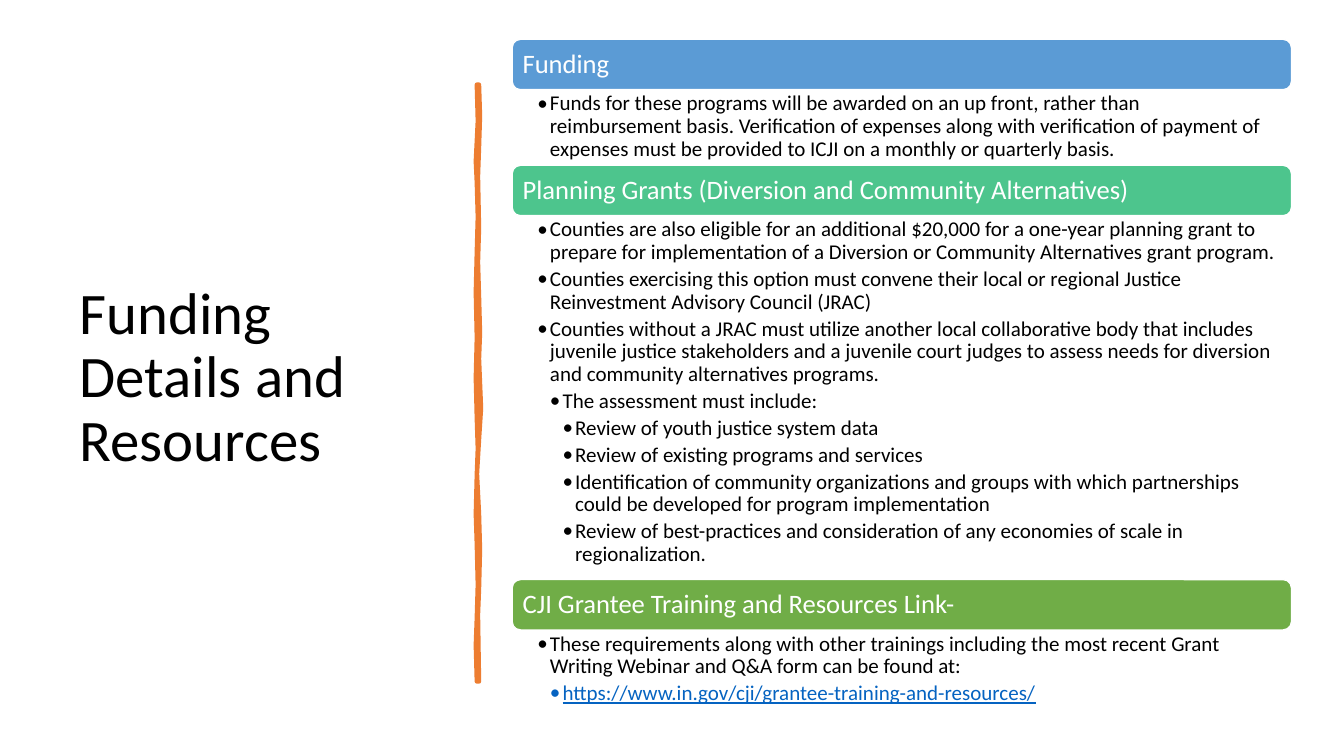
from lxml import etree
from pptx import Presentation
from pptx.dml.color import RGBColor
from pptx.enum import shapes, text
from pptx.oxml import ns
from pptx.util import Inches, Pt

TITLE = "Funding Details and Resources"
URL = "https://www.in.gov/cji/grantee-training-and-resources/"
SECTIONS = [
    ("Funding", "5B9BD5", 0.75, [
        (1, "Funds for these programs will be awarded on an up front, rather than reimbursement basis. "
            "Verification of expenses along with verification of payment of expenses must be provided "
            "to ICJI on a monthly or quarterly basis."),
    ]),
    ("Planning Grants (Diversion and Community Alternatives)", "4DC58D", 3.61, [
        (1, "Counties are also eligible for an additional $20,000 for a one-year planning grant to prepare "
            "for implementation of a Diversion or Community Alternatives grant program."),
        (1, "Counties exercising this option must convene their local or regional Justice Reinvestment "
            "Advisory Council (JRAC)"),
        (1, "Counties without a JRAC must utilize another local collaborative body that includes juvenile "
            "justice stakeholders and a juvenile court judges to assess needs for diversion and community "
            "alternatives programs."),
        (2, "The assessment must include:"),
        (3, "Review of youth justice system data"),
        (3, "Review of existing programs and services"),
        (3, "Identification of community organizations and groups with which partnerships could be "
            "developed for program implementation"),
        (3, "Review of best-practices and consideration of any economies of scale in regionalization."),
    ]),
    ("CJI Grantee Training and Resources Link-", "70AD47", 0.8, [
        (1, "These requirements along with other trainings including the most recent Grant Writing Webinar "
            "and Q&A form can be found at:"),
        (2, URL),
    ]),
]
STROKE_RIGHT = [(4.75, 0.84), (4.76, 1.15), (4.75, 1.46), (4.74, 1.75), (4.75, 2.26), (4.74, 2.6),
                (4.75, 2.94), (4.76, 3.3), (4.75, 3.56), (4.77, 4.05), (4.75, 4.36), (4.73, 4.7),
                (4.75, 5.1), (4.76, 5.45), (4.75, 5.84), (4.74, 6.1), (4.75, 6.76)]
STROKE_LEFT = [(4.73, 6.76), (4.72, 6.4), (4.73, 6.13), (4.74, 5.8), (4.73, 5.4), (4.72, 5.1),
               (4.73, 4.71), (4.74, 4.45), (4.73, 4.15), (4.72, 3.75), (4.73, 3.35), (4.72, 2.9),
               (4.73, 2.5), (4.74, 2.15), (4.73, 1.81), (4.72, 1.6), (4.74, 1.2), (4.73, 0.84)]
LEFT, TOP, WIDTH, HEADER_HEIGHT = 5.08, 0.39, 7.73, 0.5
INDENT = 0.125
HEADER_FRAME = dict(zip(("margin_left", "margin_top", "margin_right", "margin_bottom"), [Inches(0.08)] * 4),
                    word_wrap=True, vertical_anchor=text.MSO_ANCHOR.MIDDLE)
BODY_FRAME = dict(margin_left=Inches(0.25), margin_top=Inches(0.03), margin_right=Inches(0.15),
                  margin_bottom=Inches(0.03), word_wrap=True, vertical_anchor=text.MSO_ANCHOR.TOP)
TITLE_FRAME = dict(word_wrap=True, vertical_anchor=text.MSO_ANCHOR.MIDDLE, auto_size=text.MSO_AUTO_SIZE.NONE)


def color(code):
    return RGBColor.from_string(code)


def apply(target, formats):
    for key, value in formats.items():
        setattr(target, key, value)


def write(paragraph, words, size, code, after=0, underline=None):
    apply(paragraph, dict(alignment=text.PP_ALIGN.LEFT, line_spacing=0.9,
                          space_before=Pt(0), space_after=Pt(after)))
    run = paragraph.add_run()
    run.text = words
    apply(run.font, dict(name="Calibri", size=Pt(size), underline=underline))
    run.font.color.rgb = color(code)


def add_bullet(paragraph, level):
    paragraph.level = level
    properties = paragraph._p.get_or_add_pPr()
    properties.set("marL", str(Inches(INDENT * level)))
    properties.set("indent", str(-Inches(INDENT)))
    etree.SubElement(properties, ns.qn("a:buFont")).set("typeface", "Calibri")
    etree.SubElement(properties, ns.qn("a:buChar")).set("char", "•")


def paint(shape, fill, line, width):
    shape.shadow.inherit = False
    shape.fill.solid()
    shape.fill.fore_color.rgb = color(fill)
    shape.line.color.rgb = color(line)
    shape.line.width = Pt(width)


def add_title(slide):
    title = slide.shapes.title
    apply(title, dict(left=Inches(0.69), top=Inches(0.7), width=Inches(3.74), height=Inches(6.11)))
    apply(title.text_frame, TITLE_FRAME)
    write(title.text_frame.paragraphs[0], TITLE, 42, "000000")


def add_brush_stroke(slide):
    start, *rest = [(Inches(x), Inches(y)) for x, y in STROKE_RIGHT + STROKE_LEFT]
    builder = slide.shapes.build_freeform(*start)
    builder.add_line_segments(rest, close=True)
    paint(builder.convert_to_shape(), "ED7D31", "ED7D31", 3.25)


def add_section(slide, top, heading, fill, body_height, bullets):
    header = slide.shapes.add_shape(shapes.MSO_SHAPE.ROUNDED_RECTANGLE, Inches(LEFT), Inches(top),
                                    Inches(WIDTH), Inches(HEADER_HEIGHT))
    paint(header, fill, "FFFFFF", 1)
    apply(header.text_frame, HEADER_FRAME)
    write(header.text_frame.paragraphs[0], heading, 19, "FFFFFF")

    body = slide.shapes.add_textbox(Inches(LEFT), Inches(top + HEADER_HEIGHT),
                                    Inches(WIDTH), Inches(body_height)).text_frame
    apply(body, BODY_FRAME)
    for index, (level, words) in enumerate(bullets):
        paragraph = body.add_paragraph() if index else body.paragraphs[0]
        is_url = words == URL
        write(paragraph, words, 15, "0563C1" if is_url else "000000", 3, is_url or None)
        add_bullet(paragraph, level)


def main():
    deck = Presentation()
    apply(deck, dict(slide_width=Inches(13.33), slide_height=Inches(7.5)))
    slide = deck.slides.add_slide(deck.slide_layouts[5])
    add_title(slide)
    add_brush_stroke(slide)
    top = TOP
    for heading, fill, body_height, bullets in SECTIONS:
        add_section(slide, top, heading, fill, body_height, bullets)
        top += HEADER_HEIGHT + body_height
    deck.save("out.pptx")


if __name__ == "__main__":
    main()
